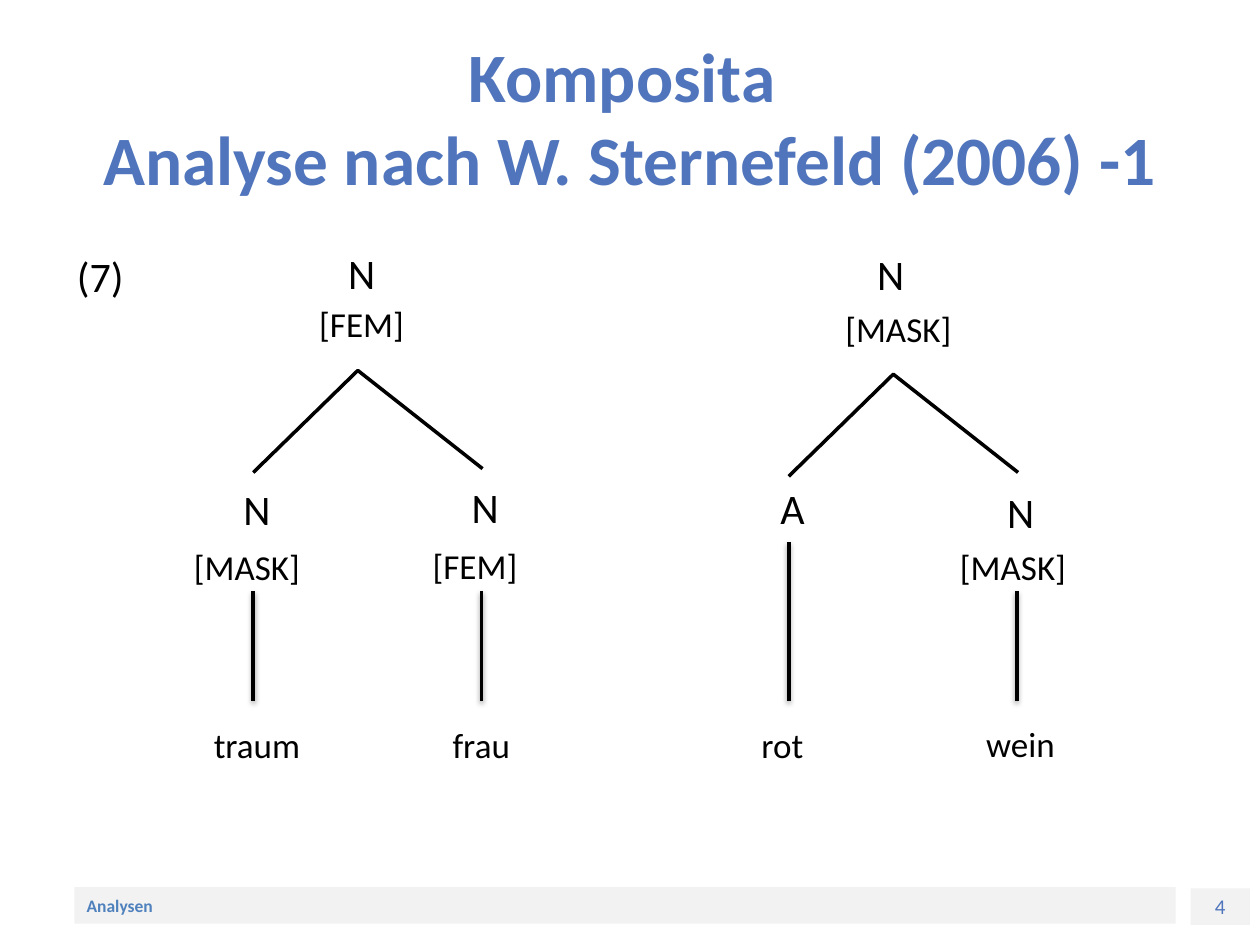
from lxml.etree import SubElement
from pptx import Presentation
from pptx.dml.color import RGBColor
from pptx.enum.shapes import MSO_CONNECTOR as Connector, MSO_SHAPE as Preset
from pptx.enum.text import MSO_ANCHOR as Anchor, MSO_AUTO_SIZE as AutoSize, PP_ALIGN as Align
from pptx.oxml.ns import qn
from pptx.util import Inches, Pt

COLUMNS, ROWS = 100, 75
BLACK, BLUE, FOOTER_BLUE, GREY = "000000", "5075BC", "4F81BD", "F2F2F2"


def color(value):
    return RGBColor.from_string(value)


def grid(*cells):
    return [Inches(cell * 10 / COLUMNS) for cell in cells]


def write(shape, text, size=24, ink=BLACK, bold=False, align=Align.CENTER,
          anchor=Anchor.MIDDLE, wrap=True, before=0):
    frame = shape.text_frame
    frame.auto_size = AutoSize.NONE
    frame.word_wrap = wrap
    frame.vertical_anchor = anchor
    paragraph = frame.paragraphs[0]
    paragraph.text = text
    paragraph.alignment = align
    paragraph.space_before = Pt(before)
    for run in paragraph.runs:
        run.font.name = "Calibri"
        run.font.size = Pt(size)
        run.font.bold = bold
        run.font.color.rgb = color(ink)
    return paragraph


def place(shape, box):
    shape.left, shape.top, shape.width, shape.height = grid(*box)


def heading(slide, box):
    place(slide.shapes.title, box)
    write(slide.shapes.title, "Komposita \vAnalyse nach W. Sternefeld (2006) -1",
          size=39.6, ink=BLUE, bold=True)


def example_number(slide, box):
    body = slide.placeholders[1]
    place(body, box)
    paragraph = write(body, "(7)", align=Align.LEFT, anchor=Anchor.TOP, before=12)
    properties = paragraph._p.get_or_add_pPr()
    properties.set("marL", "0")
    properties.set("indent", "0")
    SubElement(properties, qn("a:buNone"))


def footer_field(slide, box, text, **style):
    field = slide.shapes.add_shape(Preset.RECTANGLE, *grid(*box))
    field.shadow.inherit = False
    field.fill.solid()
    field.fill.fore_color.rgb = color(GREY)
    field.line.fill.background()
    write(field, text, **style)


def outline(shape):
    shape.line.color.rgb = color(BLACK)
    shape.line.width = Pt(2)


def branches(slide, left, apex):
    start, *feet = [grid(left + x, apex + y) for x, y in ((0, 8.1), (8.3, 0), (18.2, 7.8))]
    builder = slide.shapes.build_freeform(*start, scale=1.0)
    builder.add_line_segments(feet, close=False)
    fork = builder.convert_to_shape()
    fork.shadow.inherit = False
    fork.fill.background()
    outline(fork)


def stem(slide, x, top, bottom):
    line = slide.shapes.add_connector(Connector.STRAIGHT, *grid(x, top, x, bottom))
    outline(line)
    effects = SubElement(line._element.spPr, qn("a:effectLst"))
    shadow = SubElement(effects, qn("a:outerShdw"), blurRad=str(Pt(3.1)),
                        dist=str(Pt(1.6)), dir="5400000", rotWithShape="0")
    ink = SubElement(shadow, qn("a:srgbClr"), val=BLACK)
    SubElement(ink, qn("a:alpha"), val="38000")


def tree(slide, box, apex, stem_tops, labels):
    left, top, width, height = box
    branches(slide, left, top + apex)
    for x, stem_top in zip((0, width), stem_tops):
        stem(slide, left + x, top + stem_top, top + height)
    for text, x, y in labels:
        label = slide.shapes.add_textbox(*grid(left + x - 6, top + y - 2.5, 12, 5))
        write(label, text, size=24 if len(text) == 1 else 20, wrap=False)


def main():
    deck = Presentation()
    deck.slide_width, deck.slide_height = grid(COLUMNS, ROWS)
    slide = deck.slides.add_slide(deck.slide_layouts[1])
    footer_field(slide, (94.5, 70.5, 4.7, 2.9), "4", size=12, ink=BLUE)
    footer_field(slide, (5.9, 70.4, 87.4, 2.9), "Analysen", size=10,
                 ink=FOOTER_BLUE, bold=True, align=Align.LEFT)
    heading(slide, (5, 3, 90, 12.5))
    example_number(slide, (5.1, 19.4, 90, 49.5))
    tree(slide, (20.1, 19.4, 18.1, 36.2), 10, (27.5, 27.5), [
        ("N", 8.6, 2.25), ("[FEM]", 8.6, 6.3),
        ("N", 0.3, 20.95), ("[MASK]", -0.5, 25.55), ("traum", 0.3, 39.65),
        ("N", 18.4, 20.8), ("[FEM]", 17.6, 25.5), ("frau", 18.1, 39.65),
    ])
    tree(slide, (62.6, 19.4, 18.1, 36.2), 10.3, (23.6, 27.5), [
        ("N", 8.1, 2.35), ("[MASK]", 8.7, 6.7),
        ("A", 0.3, 20.9), ("rot", -0.5, 39.65),
        ("N", 18.4, 21.25), ("[MASK]", 17.8, 25.55), ("wein", 18.4, 39.6),
    ])
    deck.save("out.pptx")


if __name__ == "__main__":
    main()
